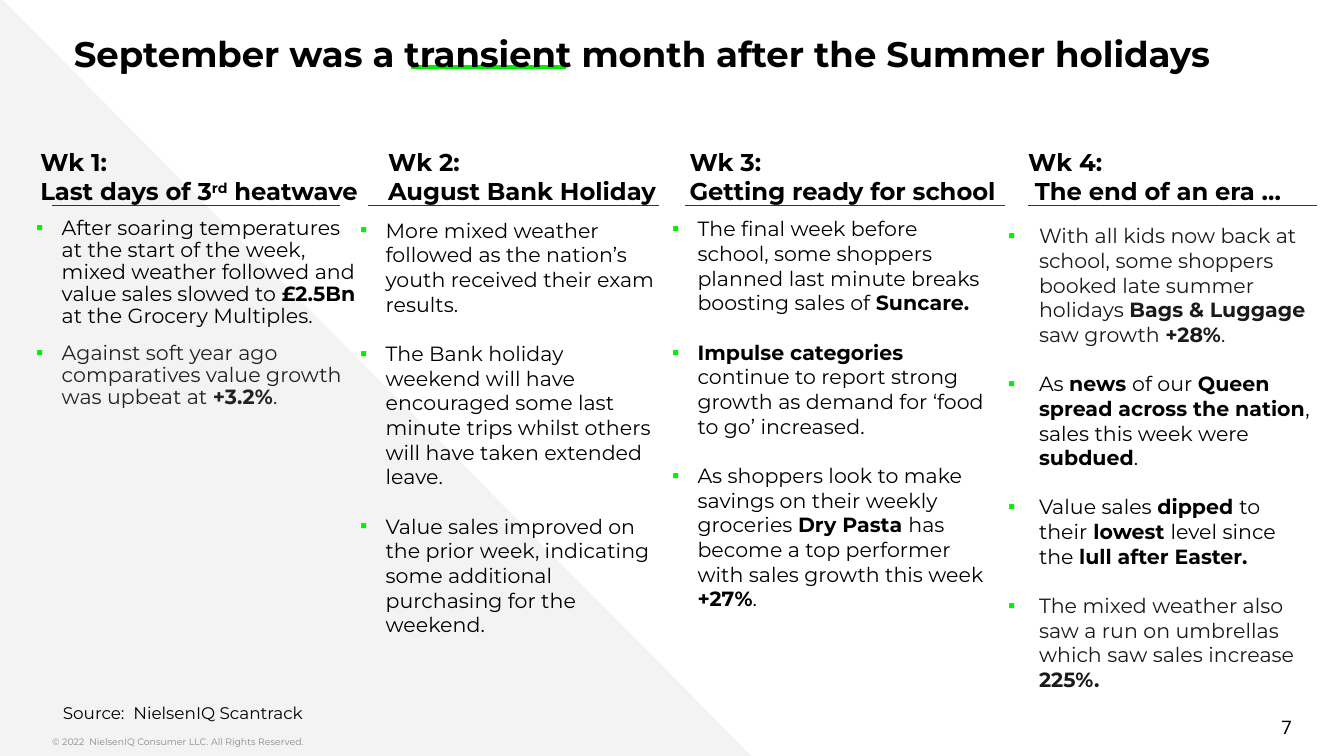
from lxml.etree import SubElement
from pptx import Presentation
from pptx.dml.color import RGBColor
from pptx.enum.shapes import MSO_CONNECTOR, MSO_SHAPE
from pptx.enum.text import MSO_ANCHOR, MSO_AUTO_SIZE, PP_ALIGN
from pptx.oxml.ns import qn
from pptx.util import Pt

BLACK = RGBColor(0x00, 0x00, 0x00)
DARK = RGBColor(0x1A, 0x1A, 0x1A)
SOFT = RGBColor(0x22, 0x22, 0x22)
RULE = RGBColor(0x33, 0x33, 0x33)
GREY = RGBColor(0x88, 0x88, 0x88)
PALE = RGBColor(0xF3, 0xF3, 0xF3)
GREEN = RGBColor(0x00, 0xEB, 0x00)
BULLET = RGBColor(0x00, 0xF0, 0x00)


class Deck:
    face = "Montserrat"

    def __init__(self, slide):
        self.slide = slide

    def place(self, shape, box):
        shape.left, shape.top, shape.width, shape.height = map(Pt, box)

    def frame(self, shape, side=0, pad=3.6, anchor=MSO_ANCHOR.TOP):
        frame = shape.text_frame
        frame.word_wrap = True
        frame.auto_size = MSO_AUTO_SIZE.NONE
        frame.margin_left = frame.margin_right = Pt(side)
        frame.margin_top = frame.margin_bottom = Pt(pad)
        frame.vertical_anchor = anchor
        return frame

    def style(self, run, size, color=BLACK, bold=False, face=None):
        font = run.font
        font.name, font.size, font.bold = face or self.face, Pt(size), bold
        font.color.rgb = color

    def back(self, shape):
        self.slide.shapes._spTree.insert(2, shape._element)

    def title(self, box, text):
        shape = self.slide.shapes.title
        self.place(shape, box)
        frame = self.frame(shape, pad=7.2)
        frame.text = text
        frame.paragraphs[0].alignment = PP_ALIGN.LEFT
        self.style(frame.paragraphs[0].runs[0], 19, bold=True)

    def text(self, box, text, size, color=BLACK, face=None,
             align=PP_ALIGN.LEFT, bold=False, **inset):
        shape = self.slide.shapes.add_textbox(*map(Pt, box))
        frame = self.frame(shape, **inset)
        frame.text = text
        for para in frame.paragraphs:
            para.alignment = align
            for run in para.runs:
                self.style(run, size, color, bold, face)
        return frame

    def head(self, box, week, text):
        # Text between ^ marks is raised
        frame = self.text(box, week, 13, bold=True, pad=7.2,
                          anchor=MSO_ANCHOR.BOTTOM)
        para = frame.add_paragraph()
        for i, part in enumerate(text.split("^")):
            run = para.add_run()
            run.text = part
            self.style(run, 13, bold=True)
            if i % 2:
                run._r.get_or_add_rPr().set("baseline", "30000")

    def list(self, index, box, items, indent, hang, after, pitch=None):
        # Text between ** marks is bold
        shape = self.slide.placeholders[index]
        self.place(shape, box)
        frame = self.frame(shape)
        for i, (text, color) in enumerate(items):
            para = frame.add_paragraph() if i else frame.paragraphs[0]
            self.bullet(para, indent, hang)
            para.space_before = Pt(0)
            para.space_after = Pt(after)
            para.line_spacing = Pt(pitch) if pitch else 1.0
            para.alignment = PP_ALIGN.LEFT
            for j, part in enumerate(text.split("**")):
                if part:
                    run = para.add_run()
                    run.text = part
                    self.style(run, 11, color, bool(j % 2))

    def bullet(self, para, indent, hang):
        props = para._p.get_or_add_pPr()
        props.set("marL", str(Pt(indent)))
        props.set("indent", str(-Pt(hang)))
        color = SubElement(props, qn("a:buClr"))
        SubElement(color, qn("a:srgbClr")).set("val", str(BULLET))
        SubElement(props, qn("a:buFont")).set("typeface", "Arial")
        SubElement(props, qn("a:buChar")).set("char", "▪")

    def line(self, left, right, y, color, width):
        line = self.slide.shapes.add_connector(
            MSO_CONNECTOR.STRAIGHT, Pt(left), Pt(y), Pt(right), Pt(y))
        line.line.color.rgb = color
        line.line.width = Pt(width)
        SubElement(line._element.spPr, qn("a:effectLst"))
        return line

    def wedge(self, box, color):
        shape = self.slide.shapes.add_shape(
            MSO_SHAPE.RIGHT_TRIANGLE, *map(Pt, box))
        shape.shadow.inherit = False
        shape.fill.solid()
        shape.fill.fore_color.rgb = color
        shape.line.fill.background()
        return shape


WEEKS = [
    dict(title="Last days of 3^rd^ heatwave", head=(21.6, 175), rule=(28, 182),
         box=(19.4, 113, 171.4, 222), indent=13.7, hang=13.7, after=8, pitch=11.8,
         items=[
             ("After soaring temperatures at the start of the week, mixed weather followed "
              "and value sales slowed to **£2.5Bn **at the Grocery Multiples.", BLACK),
             ("Against soft year ago comparatives value growth was upbeat at **+3.2%**.",
              SOFT)]),
    dict(title="August Bank Holiday", head=(208, 183), rule=(197.3, 352.8),
         box=(192.2, 113, 163.4, 281.5), indent=14.4, hang=13.7, after=13.2,
         items=[
             ("More mixed weather followed as the nation’s youth received their exam "
              "results.", BLACK),
             ("The Bank holiday weekend will have encouraged some last minute trips whilst "
              "others will have taken extended leave.", BLACK),
             ("Value sales improved on the prior week, indicating some additional "
              "purchasing for the weekend.", BLACK)]),
    dict(title="Getting ready for school", head=(369.4, 168.5), rule=(367.2, 538.5),
         box=(360, 112.3, 171.4, 258), indent=13.7, hang=13.7, after=13.2,
         items=[
             ("The final week before school, some shoppers planned last minute breaks "
              "boosting sales of **Suncare.**", BLACK),
             ("**Impulse categories **continue to report strong growth as demand for "
              "‘food to go’ increased.", BLACK),
             ("As shoppers look to make savings on their weekly groceries **Dry Pasta **has "
              "become a top performer with sales growth this week **+27%**.", BLACK)]),
    dict(title=" The end of an era …", head=(550.8, 165), rule=(550.8, 705.6),
         box=(538.6, 116, 164, 258), indent=18, hang=16.6, after=13.2,
         items=[
             ("With all kids now back at school, some shoppers booked late summer holidays "
              "**Bags & Luggage **saw growth **+28%**.", DARK),
             ("As **news **of our **Queen spread across the nation**, sales this week were "
              "**subdued**.", BLACK),
             ("Value sales **dipped **to their** lowest **level since the "
              "**lull after Easter.**", BLACK),
             ("The mixed weather also saw a run on umbrellas which saw sales increase "
              "**225%.**", DARK)]),
]


def main():
    show = Presentation()
    show.slide_width, show.slide_height = Pt(720), Pt(405)
    deck = Deck(show.slides.add_slide(show.slide_layouts[4]))

    # Title, its underline and the backdrop
    deck.title((39.6, 10, 680, 31), "September was a transient month after the Summer holidays")
    deck.back(deck.line(220.3, 303, 36, GREEN, 2.25))
    deck.back(deck.wedge((0, -1.5, 402.5, 406.5), PALE))

    # One column per week
    for i, week in enumerate(WEEKS, 1):
        deck.line(*week["rule"], 110.2, RULE, 0.75)
        left, width = week["head"]
        deck.head((left, 86.4, width, 31), f"Wk {i}:", week["title"])
        deck.list(i, week["box"], week["items"], week["indent"], week["hang"],
                  week["after"], week.get("pitch"))

    # Source and footer
    deck.text((26.6, 373, 371.5, 18), "Source:  NielsenIQ Scantrack", 9, side=7.2)
    deck.text((28, 391, 399, 14), "© 2022  NielsenIQ Consumer LLC. All Rights Reserved.",
              5, GREY)
    deck.text((530, 378.7, 162, 21.6), "7", 10, face="Roboto", align=PP_ALIGN.RIGHT,
              anchor=MSO_ANCHOR.MIDDLE)

    show.save("out.pptx")


if __name__ == "__main__":
    main()
